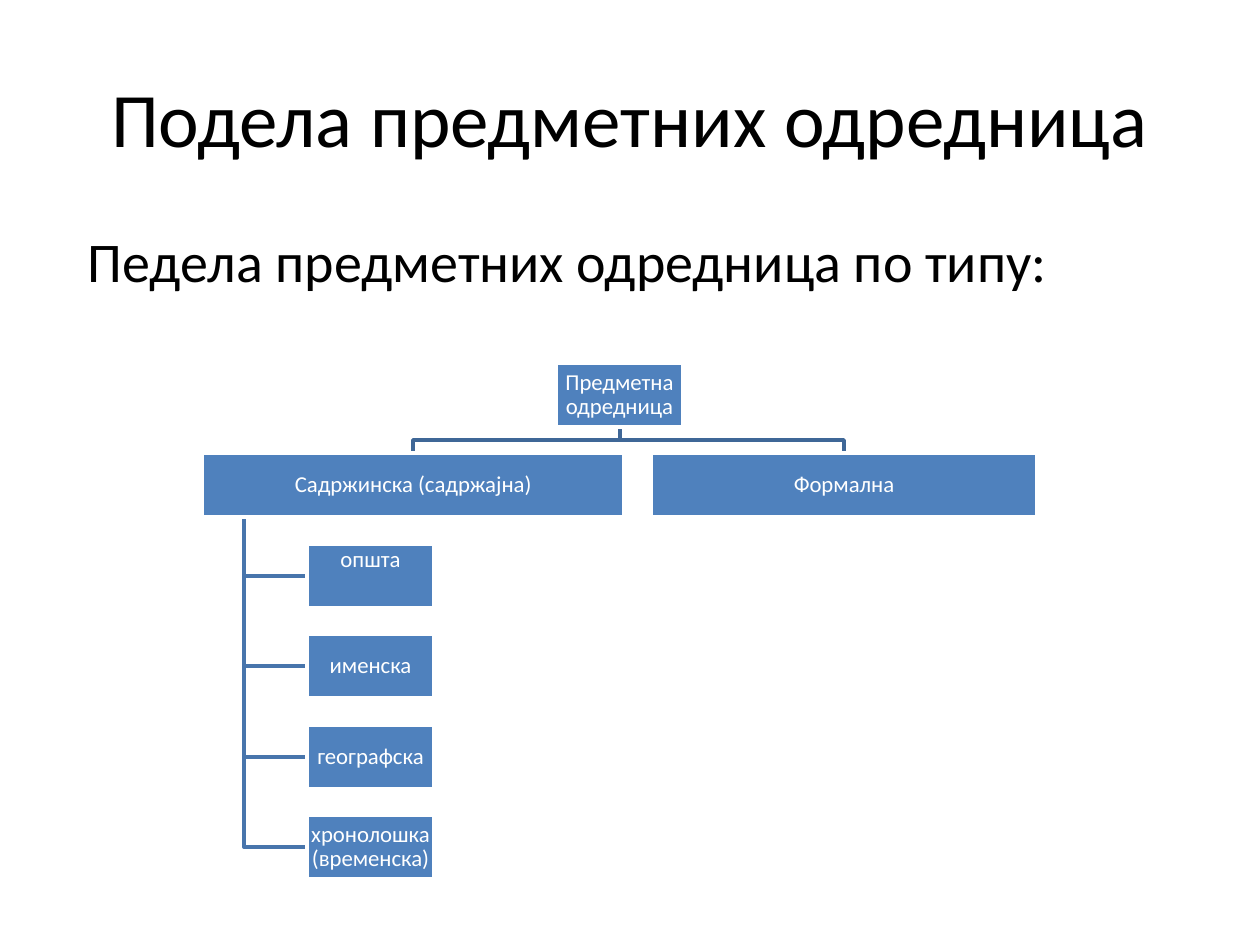
from pptx import Presentation
from pptx.dml.color import RGBColor
from pptx.enum.shapes import MSO_SHAPE
from pptx.enum.text import MSO_ANCHOR, PP_ALIGN
from pptx.util import Pt

SCALE = 914400 / 126  # EMU per px
FONT = "Calibri"
BLACK = RGBColor(0x00, 0x00, 0x00)
WHITE = RGBColor(0xFF, 0xFF, 0xFF)
BLUE = RGBColor(0x4F, 0x81, 0xBD)
UPPER_LINE = RGBColor(0x3F, 0x67, 0x97)
LOWER_LINE = RGBColor(0x48, 0x75, 0xAC)
RECTANGLE = MSO_SHAPE.RECTANGLE
TOP, MIDDLE = MSO_ANCHOR.TOP, MSO_ANCHOR.MIDDLE
LEFT, CENTER = PP_ALIGN.LEFT, PP_ALIGN.CENTER

BOX_WIDTH, BOX_HEIGHT = 127, 64
CHILD_LEFT, TRUNK = 307, 244


def emu(px):
    return round(px * SCALE)


def row_top(row):
    return 363 + row * 181 // 2


class SlideBuilder:
    def __init__(self, presentation):
        self.slide = presentation.slides.add_slide(presentation.slide_layouts[6])

    def fill_text(self, shape, text, size, color, align, anchor, insets):
        frame = shape.text_frame
        frame.text = text
        frame.word_wrap = True
        frame.vertical_anchor = anchor
        (frame.margin_left, frame.margin_top,
         frame.margin_right, frame.margin_bottom) = map(emu, insets)
        paragraph = frame.paragraphs[0]
        paragraph.alignment = align
        font = paragraph.runs[0].font
        font.name, font.size = FONT, Pt(size)
        font.color.rgb = color
        return paragraph

    def text(self, text, bounds, size, align, anchor, left_inset=12):
        shape = self.slide.shapes.add_textbox(*map(emu, bounds))
        self.fill_text(shape, text, size, BLACK, align, anchor, (left_inset, 6, 12, 6))

    def box(self, text, left, row, width=BOX_WIDTH, anchor=MIDDLE, top_inset=1):
        bounds = (left, row_top(row), width, BOX_HEIGHT)
        shape = self.slide.shapes.add_shape(RECTANGLE, *map(emu, bounds))
        shape.shadow.inherit = False
        shape.fill.solid()
        shape.fill.fore_color.rgb = BLUE
        shape.line.color.rgb = WHITE
        shape.line.width = Pt(2)
        paragraph = self.fill_text(shape, text, 13, WHITE, CENTER, anchor,
                                   (1, top_inset, 1, 1))
        paragraph.line_spacing = 0.9

    def branch(self, points, color):
        builder = self.slide.shapes.build_freeform(*points[0], scale=SCALE)
        builder.add_line_segments(points[1:], close=False)
        shape = builder.convert_to_shape()
        shape.shadow.inherit = False
        shape.fill.background()
        shape.line.color.rgb = color
        shape.line.width = Pt(2)


def main():
    presentation = Presentation()
    presentation.slide_width, presentation.slide_height = emu(1260), emu(945)
    builder = SlideBuilder(presentation)

    # Title and introduction
    builder.text("Подела предметних одредница", (63, 38, 1134, 157), 44, CENTER, MIDDLE)
    builder.text("Педела предметних одредница по типу:", (63, 220, 1134, 624),
                 32, LEFT, TOP, left_inset=25)

    # Branches from the root to the two types
    root_center, root_bottom = 620, row_top(0) + BOX_HEIGHT
    types = [("Садржинска (садржајна)", 202, 422), ("Формална", 651, 386)]
    for _, left, width in types:
        center = left + width // 2
        builder.branch([(root_center, root_bottom), (root_center, 440),
                        (center, 440), (center, row_top(1))], UPPER_LINE)

    # Branches from the first type to its subtypes
    subtypes = ["општа", "именска", "географска", "хронолошка (временска)"]
    for row in range(2, 2 + len(subtypes)):
        middle = row_top(row) + BOX_HEIGHT // 2
        builder.branch([(TRUNK, row_top(1) + BOX_HEIGHT), (TRUNK, middle),
                        (CHILD_LEFT, middle)], LOWER_LINE)

    # Boxes of the hierarchy
    builder.box("Предметна одредница", 556, 0)
    for name, left, width in types:
        builder.box(name, left, 1, width)
    builder.box(subtypes[0], CHILD_LEFT, 2, anchor=TOP, top_inset=4)
    for row, name in enumerate(subtypes[1:], start=3):
        builder.box(name, CHILD_LEFT, row)

    presentation.save("out.pptx")


if __name__ == "__main__":
    main()
